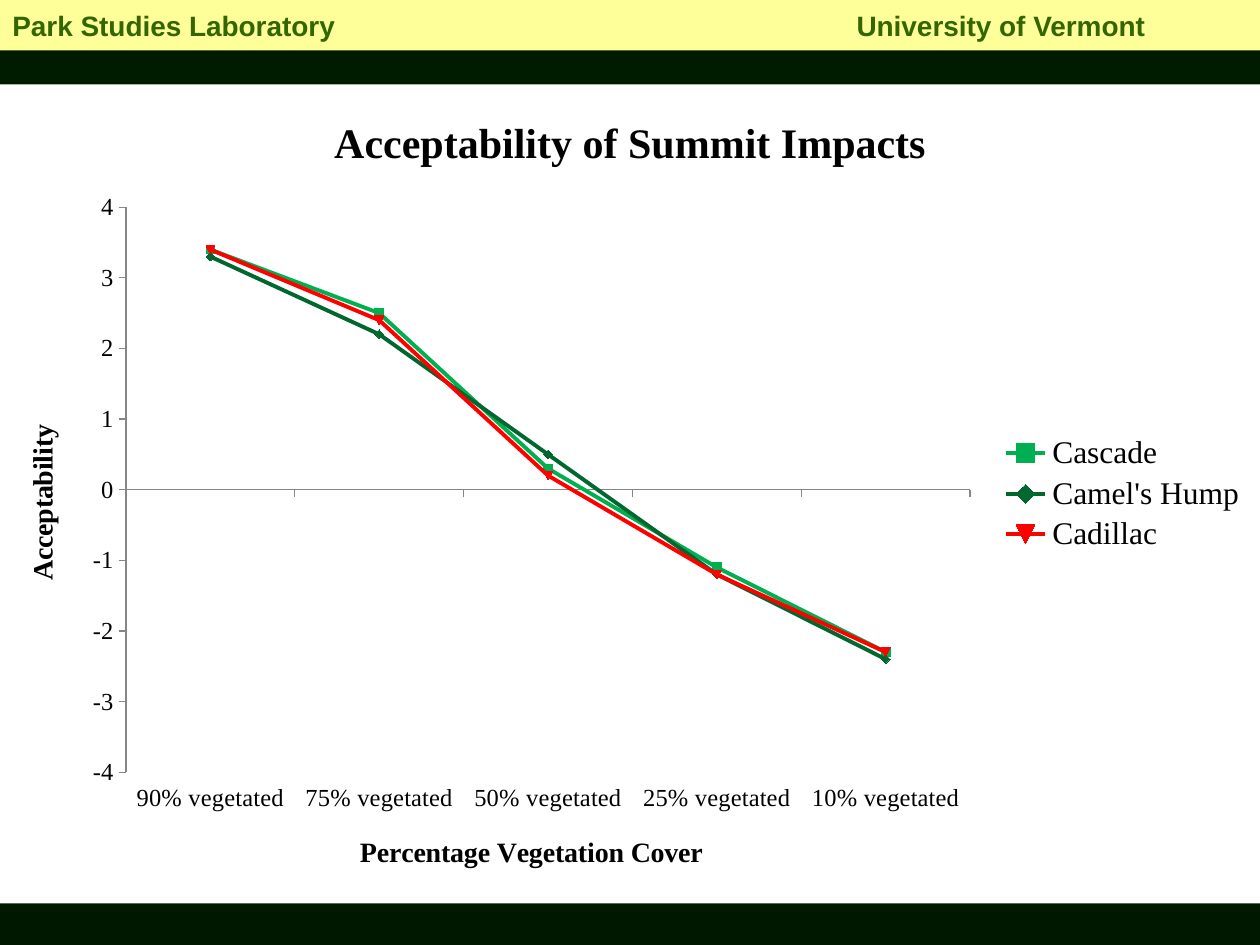
from copy import deepcopy
from dataclasses import dataclass

from lxml.etree import SubElement
from pptx import Presentation
from pptx.chart.data import CategoryChartData
from pptx.dml.color import RGBColor
from pptx.enum.chart import XL_CHART_TYPE as ChartType
from pptx.enum.chart import XL_LEGEND_POSITION as LegendPosition
from pptx.enum.chart import XL_MARKER_STYLE as MarkerStyle
from pptx.enum.chart import XL_TICK_LABEL_POSITION as LabelPosition
from pptx.enum.chart import XL_TICK_MARK as TickMark
from pptx.enum.shapes import MSO_SHAPE as ShapeKind
from pptx.enum.text import MSO_ANCHOR as Anchor
from pptx.enum.text import PP_ALIGN as Align
from pptx.oxml import parse_xml
from pptx.oxml.ns import nsdecls, qn
from pptx.util import Inches, Pt


@dataclass(frozen=True)
class Theme:
    edge: str = "001800"
    middle: str = "003300"
    paper: str = "FFFFFF"
    ink: str = "000000"
    axis: str = "868686"
    band: str = "FFFF99"
    heading: str = "336600"
    body_font: str = "Times New Roman"
    band_font: str = "Arial"
    title_size: int = 24
    legend_size: int = 18
    label_size: int = 16
    tick_size: int = 14


class SlideBuilder:
    """Draws styled elements on one slide, placed by shares of its size."""

    def __init__(self, presentation, theme):
        self.theme = theme
        self.width, self.height = presentation.slide_width, presentation.slide_height
        self.slide = presentation.slides.add_slide(presentation.slide_layouts[6])

    def box(self, left, top, width, height):
        return (round(left * self.width), round(top * self.height),
                round(width * self.width), round(height * self.height))

    def style(self, font, size, color, name, bold=False):
        values = {"size": Pt(size), "name": name, "bold": bold}
        for key, value in values.items():
            setattr(font, key, value)
        font.color.rgb = RGBColor.from_string(color)

    def chart_font(self, font, size, bold=False):
        self.style(font, size, self.theme.ink, self.theme.body_font, bold)

    def background(self):
        fill = self.slide.background.fill
        fill.gradient()
        fill.gradient_angle = 90
        first, last = fill.gradient_stops
        for stop, color in ((first, self.theme.middle), (last, self.theme.edge)):
            stop.color.rgb = RGBColor.from_string(color)
        first.position, last.position = 0.5, 1
        stops = self.slide.background.fill._fill._gradFill.find(qn("a:gsLst"))
        start = deepcopy(stops[-1])
        start.set("pos", "0")
        stops.insert(0, start)

    def header(self, box, texts, tab):
        shape = self.slide.shapes.add_shape(ShapeKind.RECTANGLE, *self.box(*box))
        shape.shadow.inherit = False
        shape.fill.solid()
        shape.fill.fore_color.rgb = RGBColor.from_string(self.theme.band)
        shape.line.fill.background()
        shape.text_frame.vertical_anchor = Anchor.MIDDLE
        paragraph = shape.text_frame.paragraphs[0]
        paragraph.alignment = Align.LEFT
        tabs = SubElement(paragraph._p.get_or_add_pPr(), qn("a:tabLst"))
        SubElement(tabs, qn("a:tab"), pos=str(round(tab * self.width)), algn="l")
        run = paragraph.add_run()
        run.text = "\t".join(texts)
        self.style(run.font, self.theme.label_size, self.theme.heading,
                   self.theme.band_font, True)

    def title(self, owner, text, size):
        owner.has_title = True
        frame = (owner.chart_title if hasattr(owner, "chart_title")
                 else owner.axis_title).text_frame
        frame.text = text
        self.chart_font(frame.paragraphs[0].runs[0].font, size, True)

    def axis(self, axis, text, **settings):
        values = {"has_major_gridlines": False, "major_tick_mark": TickMark.OUTSIDE,
                  "minor_tick_mark": TickMark.NONE, **settings}
        for key, value in values.items():
            setattr(axis, key, value)
        axis.format.line.color.rgb = RGBColor.from_string(self.theme.axis)
        axis.format.line.width = Pt(0.75)
        self.chart_font(axis.tick_labels.font, self.theme.tick_size)
        self.title(axis, text, self.theme.label_size)

    def plot_area(self, chart, **shares):
        area = chart._chartSpace.chart.plotArea
        for layout in area.findall(qn("c:layout")):
            area.remove(layout)
        values = {"layoutTarget": "inner", "xMode": "edge", "yMode": "edge", **shares}
        parts = "".join(f'<c:{key} val="{value}"/>' for key, value in values.items())
        area.insert(0, parse_xml(f'<c:layout {nsdecls("c")}><c:manualLayout>{parts}'
                                 "</c:manualLayout></c:layout>"))

    def line_chart(self, box, title, categories, lines):
        data = CategoryChartData()
        data.categories = categories
        for name, (_, values) in lines.items():
            data.add_series(name, values)
        chart = self.slide.shapes.add_chart(
            ChartType.LINE_MARKERS, *self.box(*box), data).chart
        self.chart_font(chart.font, 10)
        self.title(chart, title, self.theme.title_size)
        properties = parse_xml(
            f'<c:spPr {nsdecls("c", "a")}><a:solidFill><a:srgbClr val="{self.theme.paper}"/>'
            "</a:solidFill><a:ln><a:noFill/></a:ln></c:spPr>")
        chart._chartSpace.chart.addnext(properties)
        chart.has_legend = True
        chart.legend.position = LegendPosition.RIGHT
        chart.legend.include_in_layout = False
        self.chart_font(chart.legend.font, self.theme.legend_size)
        chart.plots[0].vary_by_categories = False
        for series, (color, _) in zip(chart.plots[0].series, lines.values()):
            series.smooth = False
            series.format.line.width = Pt(2.25)
            series.marker.style, series.marker.size = MarkerStyle.AUTOMATIC, 5
            series.marker.format.fill.solid()
            for target in (series.format.line.color, series.marker.format.line.color,
                           series.marker.format.fill.fore_color):
                target.rgb = RGBColor.from_string(color)
        return chart


def main():
    presentation = Presentation()
    presentation.slide_width, presentation.slide_height = Inches(10), Inches(7.5)
    builder = SlideBuilder(presentation, Theme())
    builder.background()
    chart = builder.line_chart(
        (0, 0.67 / 7.5, 1, 6.5 / 7.5), "Acceptability of Summit Impacts",
        [f"{share}% vegetated" for share in (90, 75, 50, 25, 10)],
        {"Cascade": ("00B050", (3.4, 2.5, 0.3, -1.1, -2.3)),
         "Camel's Hump": ("00672F", (3.3, 2.2, 0.5, -1.2, -2.4)),
         "Cadillac": ("FF0000", (3.4, 2.4, 0.2, -1.2, -2.3))})
    builder.plot_area(chart, x=0.1, y=0.15, w=0.67, h=0.69)
    builder.axis(chart.category_axis, "Percentage Vegetation Cover",
                 tick_label_position=LabelPosition.LOW)
    builder.axis(chart.value_axis, "Acceptability",
                 minimum_scale=-4, maximum_scale=4, major_unit=1)
    builder.header((0, 0, 1, 0.4 / 7.5),
                   ("Park Studies Laboratory", "University of Vermont"), 0.67)
    presentation.save("out.pptx")


if __name__ == "__main__":
    main()
